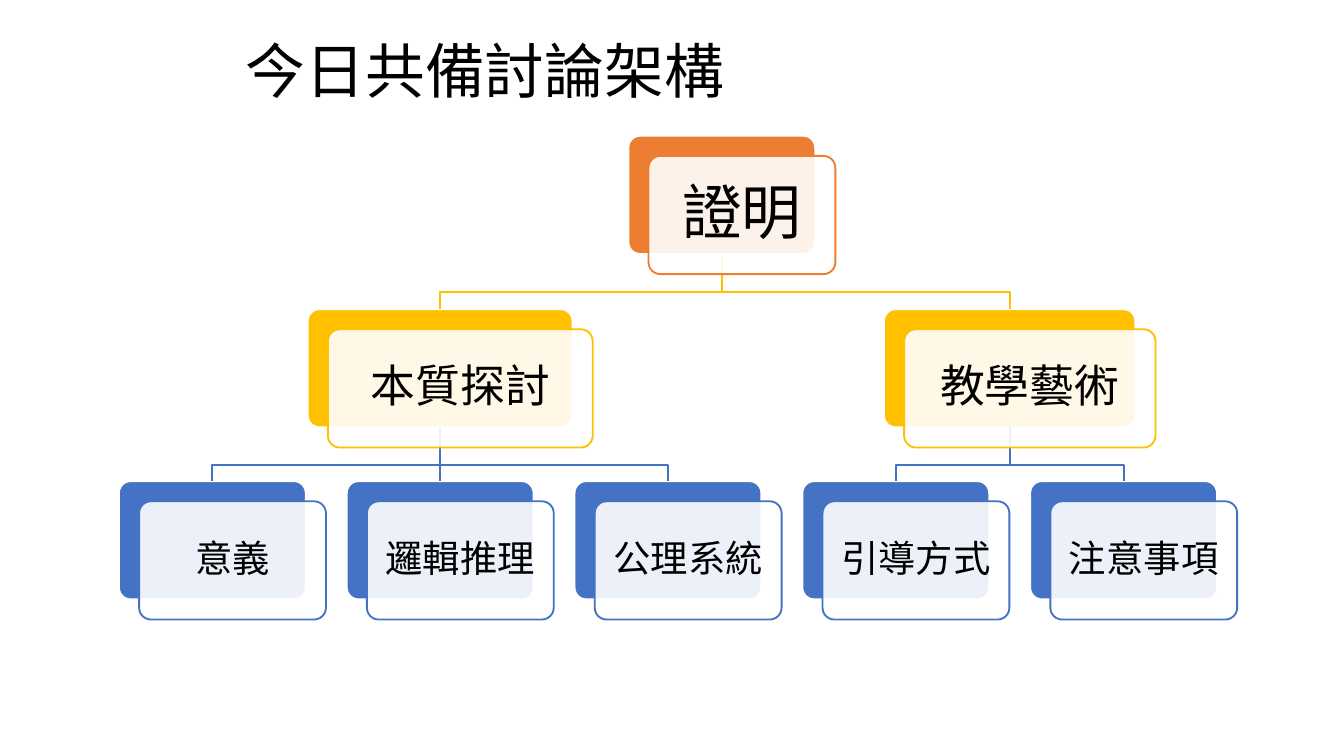
from dataclasses import dataclass

from lxml import etree
from pptx import Presentation
from pptx.dml.color import RGBColor
from pptx.enum import shapes, text
from pptx.oxml.ns import qn
from pptx.util import Inches, Pt

COLORS = {"root": "ED7D31", "branch": "FFC000", "leaf": "4472C4",
          "paper": "FFFFFF", "ink": "000000"}
CARD_HEIGHT = 0.88
FRONT_OFFSET = 0.15
BEND_DROP = 0.28
LEAF_WIDTH = 1.39
FIRST_LEAF, LAST_LEAF = 1.58, 8.36


@dataclass(frozen=True)
class Level:
    color: str
    top: float
    size: int
    inset: float


@dataclass(frozen=True)
class Topic:
    label: str
    level: Level
    center: float
    width: float
    children: tuple = ()


ROOT = Level("root", 1.01, 32, 0.16)
BRANCH = Level("branch", 2.3, 24, 0.13)
LEAF = Level("leaf", 3.58, 20, 0.1)


def rgb(name: str) -> RGBColor:
    return RGBColor.from_string(COLORS[name])


def apply_format(target, values: dict) -> None:
    for attribute, value in values.items():
        setattr(target, attribute, value)


def set_line(shape, color: str) -> None:
    shape.line.color.rgb = rgb(color)
    shape.line.width = Pt(1)


def add_card(slide, topic: Topic, offset: float, fill: str, line: str):
    card = slide.shapes.add_shape(
        shapes.MSO_SHAPE.ROUNDED_RECTANGLE,
        Inches(topic.center - topic.width / 2 + offset),
        Inches(topic.level.top + offset),
        Inches(topic.width), Inches(CARD_HEIGHT))
    card.adjustments[0] = 0.1
    card.shadow.inherit = False
    card.fill.solid()
    card.fill.fore_color.rgb = rgb(fill)
    set_line(card, line)
    return card


def add_front(slide, topic: Topic) -> None:
    """Add the translucent card that carries the label."""
    front = add_card(slide, topic, FRONT_OFFSET, "paper", topic.level.color)
    fill_color = front.fill._xPr.find(qn("a:solidFill"))[0]
    etree.SubElement(fill_color, qn("a:alpha"), val="90000")

    frame = front.text_frame
    inset = Inches(topic.level.inset)
    apply_format(frame, {
        "word_wrap": True, "vertical_anchor": text.MSO_ANCHOR.MIDDLE,
        "margin_left": inset, "margin_right": inset,
        "margin_top": inset, "margin_bottom": inset})
    label = frame.paragraphs[0]
    label.text = topic.label
    apply_format(label, {"alignment": text.PP_ALIGN.CENTER, "line_spacing": 0.9})
    apply_format(label.font, {"name": "Calibri", "size": Pt(topic.level.size)})
    label.font.color.rgb = rgb("ink")


def add_link(slide, parent: Topic, child: Topic, backs: dict) -> None:
    """Join two cards, with a bend when the child is not straight below."""
    if abs(parent.center - child.center) < 0.01:
        link = slide.shapes.add_connector(shapes.MSO_CONNECTOR.STRAIGHT, 0, 0, 0, 0)
        link.begin_connect(backs[parent], 2)
        link.end_connect(backs[child], 0)
        etree.SubElement(link._element.spPr, qn("a:effectLst"))
    else:
        start = parent.level.top + CARD_HEIGHT
        bend = start + BEND_DROP
        outline = slide.shapes.build_freeform(Inches(parent.center), Inches(start))
        outline.add_line_segments(
            [(Inches(x), Inches(y)) for x, y in (
                (parent.center, bend), (child.center, bend),
                (child.center, child.level.top))], close=False)
        link = outline.convert_to_shape()
        link.fill.background()
        link.shadow.inherit = False
    set_line(link, child.level.color)


def add_title(slide, wording: str) -> None:
    title = slide.shapes.title
    apply_format(title, {"left": Inches(1.73), "top": Inches(0.2),
                         "width": Inches(4.26), "height": Inches(0.64)})
    apply_format(title.text_frame, {
        "word_wrap": True, "vertical_anchor": text.MSO_ANCHOR.TOP,
        "auto_size": text.MSO_AUTO_SIZE.NONE})
    heading = title.text_frame.paragraphs[0]
    heading.alignment = text.PP_ALIGN.LEFT
    run = heading.add_run()
    run.text = wording
    apply_format(run.font, {"name": "Noto Sans CJK SC", "size": Pt(32)})
    run.font.color.rgb = rgb("ink")
    etree.SubElement(run.font._element, qn("a:ea"), typeface="Noto Sans CJK SC")


def build_topics() -> list[Topic]:
    labels = ("意義", "邏輯推理", "公理系統", "引導方式", "注意事項")
    pitch = (LAST_LEAF - FIRST_LEAF) / (len(labels) - 1)
    leaves = [Topic(label, LEAF, FIRST_LEAF + i * pitch, LEAF_WIDTH)
              for i, label in enumerate(labels)]
    branches = []
    for label, width, children in (("本質探討", 1.97, leaves[:3]),
                                   ("教學藝術", 1.87, leaves[3:])):
        center = (children[0].center + children[-1].center) / 2
        branches.append(Topic(label, BRANCH, center, width, tuple(children)))
    proof = Topic("證明", ROOT, 5.37, LEAF_WIDTH, tuple(branches))
    return [proof, *branches, *leaves]


def main() -> None:
    deck = Presentation()
    deck.slide_width = Inches(10)
    deck.slide_height = deck.slide_width * 9 // 16
    slide = deck.slides.add_slide(deck.slide_layouts[5])
    add_title(slide, "今日共備討論架構")

    topics = build_topics()
    backs = {topic: add_card(slide, topic, 0, topic.level.color, "paper")
             for topic in topics}
    for topic in topics:
        for child in topic.children:
            add_link(slide, topic, child, backs)
    for topic in topics:
        add_front(slide, topic)
    deck.save("out.pptx")


if __name__ == "__main__":
    main()
